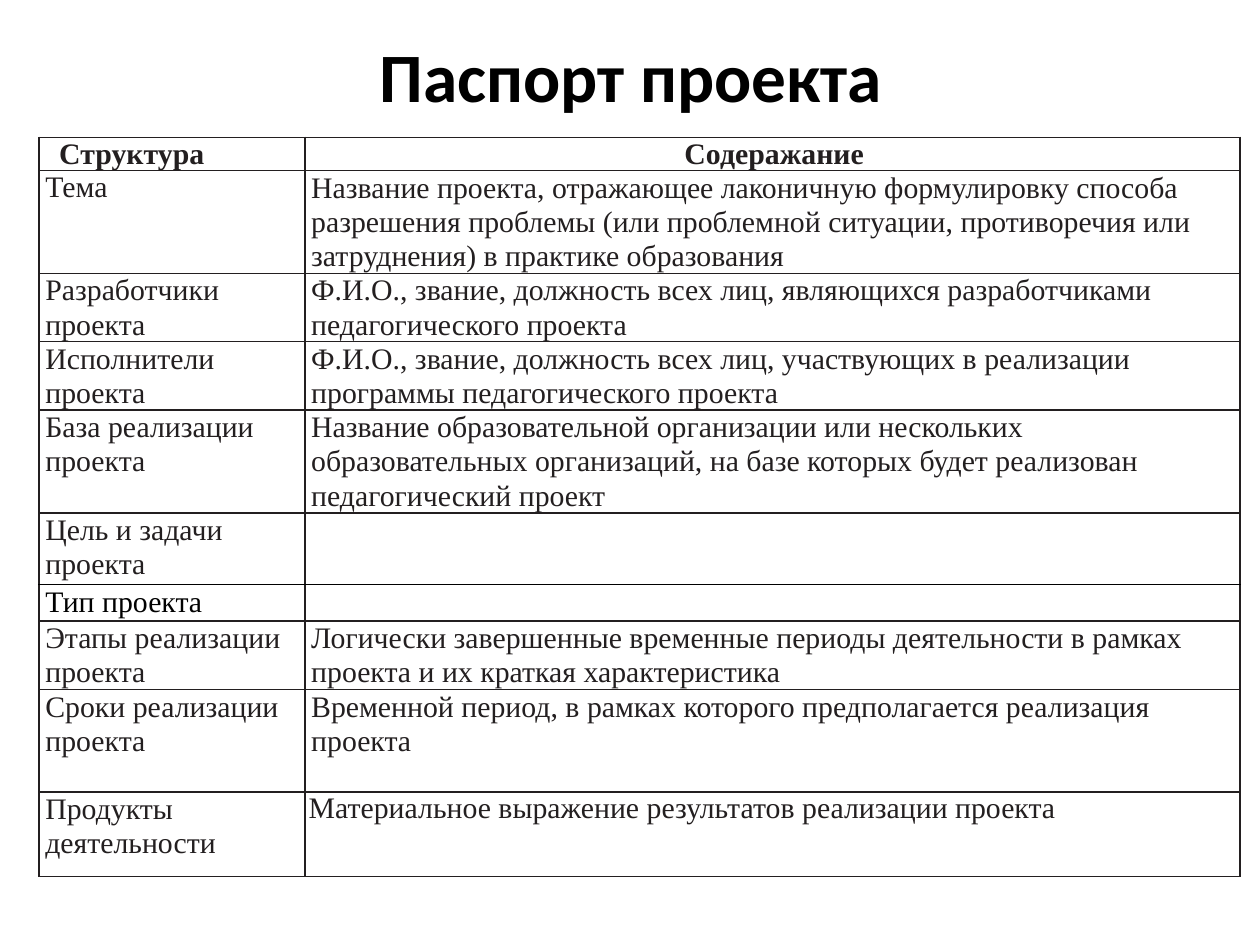
from dataclasses import dataclass

from lxml.etree import SubElement
from pptx import Presentation
from pptx.dml.color import RGBColor
from pptx.enum.text import MSO_ANCHOR, MSO_AUTO_SIZE, PP_ALIGN
from pptx.oxml.ns import qn
from pptx.util import Inches, Pt


@dataclass(frozen=True)
class Theme:
    ink: str = "231F20"
    black: str = "000000"
    title_font: str = "Calibri"
    table_font: str = "Times New Roman"
    title_size: float = 39.6
    table_size: float = 17
    border_width: float = 1


@dataclass(frozen=True)
class CellStyle:
    indent: float = 0.5
    line_spacing: float | None = 1.03
    space_before: float = 0.9
    bold: bool = False
    color: str = Theme.ink
    align: PP_ALIGN = PP_ALIGN.LEFT


BODY = CellStyle()
PLAIN = CellStyle(line_spacing=None)
HEAD_LEFT = CellStyle(1.6, None, 0.8, True)
HEAD_CENTER = CellStyle(0.3, None, 0.8, True, align=PP_ALIGN.CENTER)
BLACK_LABEL = CellStyle(color=Theme.black)
RESULT = CellStyle(0.3, None)

# Row height in grid rows, label, content, styles of both cells
PASSPORT = [
    (2.6, "Структура", "Содеражание", HEAD_LEFT, HEAD_CENTER),
    (8.15, "Тема", "Название проекта, отражающее лаконичную формулировку способа "
     "разрешения проблемы (или проблемной ситуации, противоречия или "
     "затруднения) в практике образования", PLAIN, BODY),
    (5.4, "Разработчики проекта", "Ф.И.О., звание, должность всех лиц, "
     "являющихся разработчиками педагогического проекта", BODY, BODY),
    (5.4, "Исполнители проекта", "Ф.И.О., звание, должность всех лиц, "
     "участвующих в реализации программы педагогического проекта", BODY, BODY),
    (8.15, "База реализации проекта", "Название образовательной организации или "
     "нескольких образовательных организаций, на базе которых будет реализован "
     "педагогический проект", BODY, BODY),
    (5.7, "Цель и задачи проекта", "", BODY, BODY),
    (2.7, "Тип проекта", "", BLACK_LABEL, BODY),
    (5.4, "Этапы реализации проекта", "Логически завершенные временные периоды "
     "деятельности в рамках проекта и их краткая характеристика", BODY, BODY),
    (8.15, "Сроки реализации проекта", "Временной период, в рамках которого "
     "предполагается реализация проекта", BODY, BODY),
    (6.7, "Продукты деятельности", "Материальное выражение результатов "
     "реализации проекта", BODY, RESULT),
]
BLACK_RULE_ROW = 6  # the rule above this row is black


class SlideBuilder:
    """Places elements on a grid of 100 columns by 75 rows."""

    def __init__(self, presentation, theme):
        self.theme = theme
        self.column = presentation.slide_width / 100
        self.row = presentation.slide_height / 75
        self.slide = presentation.slides.add_slide(presentation.slide_layouts[5])

    def across(self, columns):
        return round(columns * self.column)

    def down(self, rows):
        return round(rows * self.row)

    def add_run(self, paragraph, text, font_name, size, color, bold):
        run = paragraph.add_run()
        run.text = text
        run.font.name = font_name
        run.font.size = Pt(size)
        run.font.bold = bold
        run.font.color.rgb = RGBColor.from_string(color)

    def title(self, text, left, top, width, height):
        shape = self.slide.shapes.title
        shape.left, shape.top = self.across(left), self.down(top)
        shape.width, shape.height = self.across(width), self.down(height)
        frame = shape.text_frame
        frame.auto_size = MSO_AUTO_SIZE.NONE
        frame.vertical_anchor = MSO_ANCHOR.MIDDLE
        paragraph = frame.paragraphs[0]
        paragraph.alignment = PP_ALIGN.CENTER
        self.add_run(paragraph, text, self.theme.title_font,
                     self.theme.title_size, self.theme.black, True)

    def table(self, left, top, column_widths, rows):
        frame = self.slide.shapes.add_table(
            len(rows), len(column_widths), self.across(left), self.down(top),
            self.across(sum(column_widths)), self.down(sum(row[0] for row in rows)))
        table = frame.table
        table.first_row = table.horz_banding = False
        for column, width in zip(table.columns, column_widths):
            column.width = self.across(width)
        for index, (height, label, content, *styles) in enumerate(rows):
            table.rows[index].height = self.down(height)
            for cell, text, style in zip(table.rows[index].cells, (label, content), styles):
                self.fill_cell(cell, text, style)
                self.border_cell(cell, index)

    def fill_cell(self, cell, text, style):
        cell.margin_left = cell.margin_right = cell.margin_top = cell.margin_bottom = 0
        paragraph = cell.text_frame.paragraphs[0]
        if not text:
            # The end mark's size keeps an empty row from growing
            SubElement(paragraph._p, qn("a:endParaRPr"), sz=str(self.theme.table_size * 100))
            return
        properties = paragraph._p.get_or_add_pPr()
        properties.set("marL", str(self.across(style.indent)))
        properties.set("indent", "0")
        paragraph.alignment = style.align
        paragraph.line_spacing = style.line_spacing
        paragraph.space_before = Pt(style.space_before)
        self.add_run(paragraph, text, self.theme.table_font,
                     self.theme.table_size, style.color, style.bold)

    def border_cell(self, cell, row_index):
        properties = cell._tc.get_or_add_tcPr()
        black_side = {BLACK_RULE_ROW - 1: "lnB", BLACK_RULE_ROW: "lnT"}.get(row_index)
        for side in ("lnL", "lnR", "lnT", "lnB"):
            line = SubElement(properties, qn(f"a:{side}"), w=str(Pt(self.theme.border_width)))
            fill = SubElement(line, qn("a:solidFill"))
            color = self.theme.black if side == black_side else self.theme.ink
            SubElement(fill, qn("a:srgbClr"), val=color)
        cell.fill.background()


def main():
    presentation = Presentation()
    presentation.slide_width, presentation.slide_height = Inches(10), Inches(7.5)
    builder = SlideBuilder(presentation, Theme())
    builder.title("Паспорт проекта", 4.7, 1.2, 90.8, 9.4)
    builder.table(3.1, 10.9, (21.1, 74.2), PASSPORT)
    presentation.save("out.pptx")


if __name__ == "__main__":
    main()
